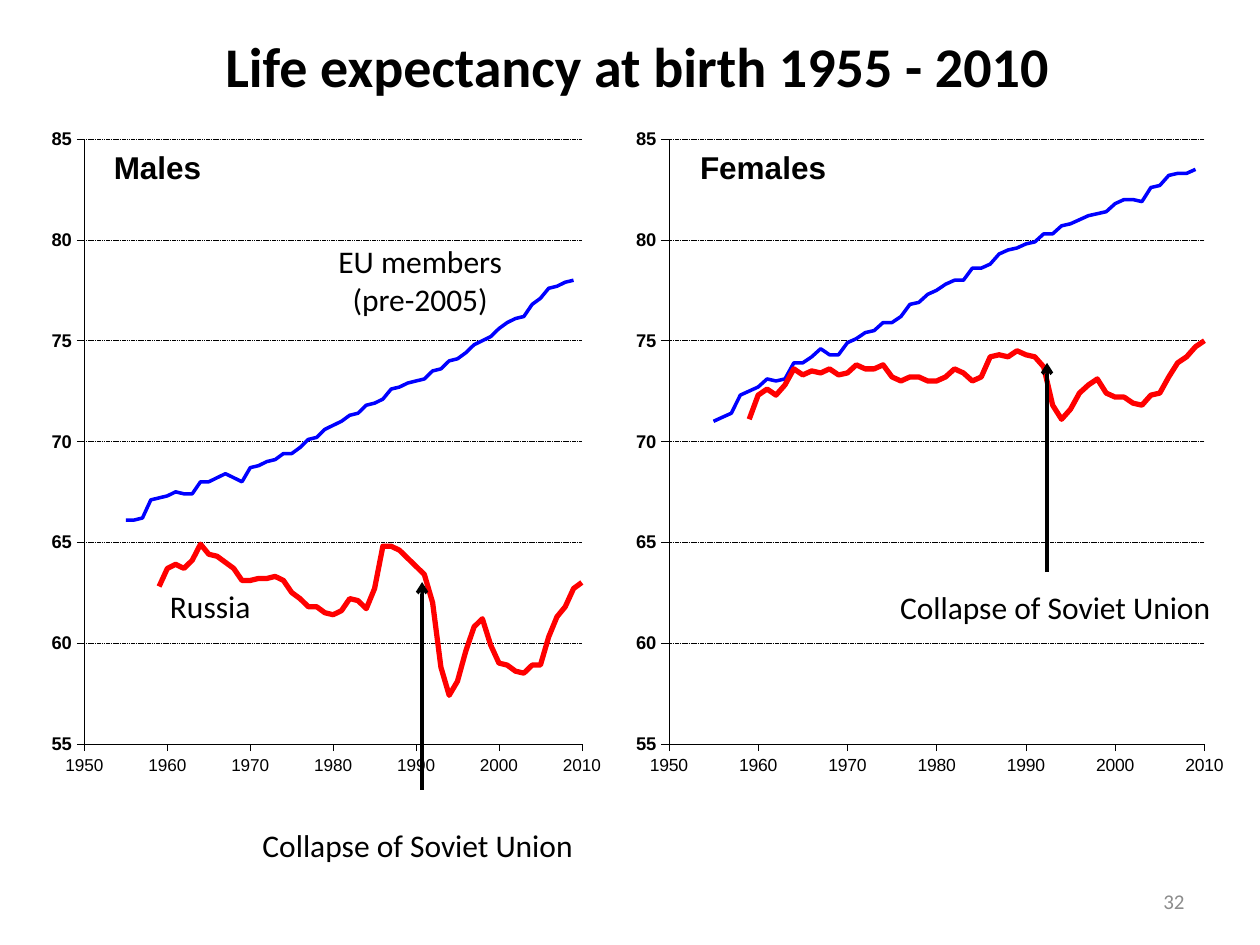
from dataclasses import dataclass

from lxml import etree
from pptx import Presentation
from pptx.chart.data import XyChartData
from pptx.dml.color import RGBColor
from pptx.enum.chart import XL_CHART_TYPE, XL_TICK_MARK
from pptx.enum.dml import MSO_LINE
from pptx.enum.shapes import MSO_CONNECTOR
from pptx.enum.text import MSO_ANCHOR, MSO_AUTO_SIZE, PP_ALIGN
from pptx.oxml import parse_xml
from pptx.oxml.ns import nsdecls, qn
from pptx.util import Inches, Pt

SCATTER = XL_CHART_TYPE.XY_SCATTER_LINES_NO_MARKERS
OUTSIDE, NO_TICK = XL_TICK_MARK.OUTSIDE, XL_TICK_MARK.NONE
DASH = MSO_LINE.SQUARE_DOT
STRAIGHT = MSO_CONNECTOR.STRAIGHT
MIDDLE = MSO_ANCHOR.MIDDLE
FIT, FIXED = MSO_AUTO_SIZE.SHAPE_TO_FIT_TEXT, MSO_AUTO_SIZE.NONE
LEFT, CENTER, RIGHT = PP_ALIGN.LEFT, PP_ALIGN.CENTER, PP_ALIGN.RIGHT


@dataclass(frozen=True)
class Theme:
    """Colours, fonts and type sizes of the slide."""
    black: RGBColor = RGBColor(0, 0, 0)
    white: RGBColor = RGBColor(255, 255, 255)
    grey: RGBColor = RGBColor(0x8C, 0x8C, 0x8C)
    russia: RGBColor = RGBColor(255, 0, 0)
    union: RGBColor = RGBColor(0, 0, 255)
    text_font: str = "Calibri"
    chart_font: str = "Arial"
    title: float = 32
    label: float = 18
    number: float = 12
    axis: float = 10.5


THEME = Theme()
YEARS = range(1955, 2011)
RUSSIA_START, UNION_START = 1959, 1955
PLOT_AREA = {"x": 0.079, "y": 0.027, "w": 0.864, "h": 0.788}
TITLE_AREA = {"x": 0.12, "y": 0.03}

MALES_RUSSIA = (
    62.8, 63.7, 63.9, 63.7, 64.1, 64.9, 64.4, 64.3, 64, 63.7, 63.1, 63.1, 63.2,
    63.2, 63.3, 63.1, 62.5, 62.2, 61.8, 61.8, 61.5, 61.4, 61.6, 62.2, 62.1, 61.7,
    62.7, 64.8, 64.8, 64.6, 64.2, 63.8, 63.4, 62, 58.8, 57.4, 58.1, 59.6, 60.8,
    61.2, 59.9, 59, 58.9, 58.6, 58.5, 58.9, 58.9, 60.3, 61.3, 61.8, 62.7, 63)
MALES_UNION = (
    66.1, 66.1, 66.2, 67.1, 67.2, 67.3, 67.5, 67.4, 67.4, 68, 68, 68.2, 68.4,
    68.2, 68, 68.7, 68.8, 69, 69.1, 69.4, 69.4, 69.7, 70.1, 70.2, 70.6, 70.8, 71,
    71.3, 71.4, 71.8, 71.9, 72.1, 72.6, 72.7, 72.9, 73, 73.1, 73.5, 73.6, 74,
    74.1, 74.4, 74.8, 75, 75.2, 75.6, 75.9, 76.1, 76.2, 76.8, 77.1, 77.6, 77.7,
    77.9, 78)
FEMALES_RUSSIA = (
    71.1, 72.3, 72.6, 72.3, 72.8, 73.6, 73.3, 73.5, 73.4, 73.6, 73.3, 73.4, 73.8,
    73.6, 73.6, 73.8, 73.2, 73, 73.2, 73.2, 73, 73, 73.2, 73.6, 73.4, 73, 73.2,
    74.2, 74.3, 74.2, 74.5, 74.3, 74.2, 73.7, 71.8, 71.1, 71.6, 72.4, 72.8, 73.1,
    72.4, 72.2, 72.2, 71.9, 71.8, 72.3, 72.4, 73.2, 73.9, 74.2, 74.7, 75)
FEMALES_UNION = (
    71, 71.2, 71.4, 72.3, 72.5, 72.7, 73.1, 73, 73.1, 73.9, 73.9, 74.2, 74.6,
    74.3, 74.3, 74.9, 75.1, 75.4, 75.5, 75.9, 75.9, 76.2, 76.8, 76.9, 77.3, 77.5,
    77.8, 78, 78, 78.6, 78.6, 78.8, 79.3, 79.5, 79.6, 79.8, 79.9, 80.3, 80.3,
    80.7, 80.8, 81, 81.2, 81.3, 81.4, 81.8, 82, 82, 81.9, 82.6, 82.7, 83.2, 83.3,
    83.3, 83.5)


def apply(target, **values):
    """Set each named attribute on the target."""
    for name, value in values.items():
        setattr(target, name, value)


def style_font(font, size, color=THEME.black, name=THEME.text_font, bold=False):
    """Give a font its face, size, weight and colour."""
    apply(font, size=Pt(size), name=name, bold=bold)
    font.color.rgb = color


def style_line(line, color, width):
    """Give a line its colour and width."""
    line.color.rgb = color
    line.width = Pt(width)


def place_manually(parent, index, area, inner=False):
    """Give a chart part a manual layout in fractions of the chart."""
    for old in parent.findall(qn("c:layout")):
        parent.remove(old)
    layout = etree.Element(qn("c:layout"))
    manual = etree.SubElement(layout, qn("c:manualLayout"))
    values = {"layoutTarget": "inner"} if inner else {}
    values |= {"xMode": "edge", "yMode": "edge"}
    values |= {key: str(value) for key, value in area.items()}
    for key, value in values.items():
        etree.SubElement(manual, qn(f"c:{key}")).set("val", value)
    parent.insert(index, layout)


def style_axis(axis, size, low, high, step, bold):
    """Scale an axis and format its line and labels."""
    apply(axis, minimum_scale=low, maximum_scale=high, major_unit=step,
          major_tick_mark=OUTSIDE, minor_tick_mark=NO_TICK)
    style_line(axis.format.line, THEME.black, 0.25)
    style_font(axis.tick_labels.font, size, name=THEME.chart_font, bold=bold)


def yearly_data(russia, union):
    """Put both series on the same years, with None where there is no value."""
    data = XyChartData()
    for name, start, values in (("Series 1", RUSSIA_START, russia),
                                ("Series 2", UNION_START, union)):
        series = data.add_series(name)
        by_year = dict(enumerate(values, start))
        for year in YEARS:
            series.add_data_point(year, by_year.get(year))
    return data


def clear_missing_points(plot):
    """Leave years without a value empty in the chart."""
    for point in list(plot._element.iter(qn("c:pt"))):
        if point.findtext(qn("c:v")) in (None, "", "None"):
            point.getparent().remove(point)


def add_panel(slide, heading, left, width, year_size, russia, union):
    """Add one life expectancy chart."""
    chart = slide.shapes.add_chart(SCATTER, Inches(left), Inches(0.94), Inches(width),
                                   Inches(6.09), yearly_data(russia, union)).chart
    chart.has_legend = False
    style_font(chart.font, THEME.axis, name=THEME.chart_font)
    plot = chart.plots[0]
    plot.vary_by_categories = False
    clear_missing_points(plot)
    for series, color, weight in zip(plot.series, (THEME.russia, THEME.union), (3, 2)):
        series.smooth = False
        style_line(series.format.line, color, weight)

    style_axis(chart.category_axis, year_size, 1950, 2010, 10, False)
    style_axis(chart.value_axis, THEME.axis, 55, 85, 5, True)
    chart.category_axis.has_major_gridlines = False
    chart.value_axis.has_major_gridlines = True
    grid = chart.value_axis.major_gridlines.format.line
    style_line(grid, THEME.black, 0.25)
    grid.dash_style = DASH

    title = chart.chart_title
    title.text_frame.text = heading
    style_font(title.text_frame.paragraphs[0].runs[0].font, THEME.label,
               name=THEME.chart_font, bold=True)
    title_node = title._element
    place_manually(title_node, 1, TITLE_AREA)
    title_node.find(qn("c:overlay")).set("val", "1")
    chart_node = chart._chartSpace.find(qn("c:chart"))
    place_manually(chart_node.find(qn("c:plotArea")), 0, PLOT_AREA, inner=True)
    chart_node.addnext(parse_xml(
        f'<c:spPr {nsdecls("c", "a")}><a:solidFill><a:srgbClr val="{THEME.white}">'
        '<a:alpha val="84000"/></a:srgbClr></a:solidFill>'
        '<a:ln><a:noFill/></a:ln></c:spPr>'))


def write(box, lines, size, color=THEME.black, align=LEFT, bold=False, **frame_values):
    """Write lines of text into a box as paragraphs."""
    frame = box.text_frame
    apply(frame, **frame_values)
    for index, line in enumerate(lines):
        para = frame.add_paragraph() if index else frame.paragraphs[0]
        para.alignment = align
        span = para.add_run()
        span.text = line
        style_font(span.font, size, color, bold=bold)


def add_title(slide, text):
    """Move, fill and write the title placeholder."""
    title = slide.shapes.title
    apply(title, left=Inches(1.66), top=Inches(0.2), width=Inches(6.8), height=Inches(0.64))
    title.fill.solid()
    title.fill.fore_color.rgb = THEME.white
    color = title._element.spPr.find(".//" + qn("a:srgbClr"))
    etree.SubElement(color, qn("a:alpha")).set("val", "80000")
    write(title, [text], THEME.title, align=CENTER, bold=True, word_wrap=False, auto_size=FIT)


def add_label(slide, area, lines, align=CENTER):
    """Add a text label that fits its words."""
    box = slide.shapes.add_textbox(*map(Inches, area))
    write(box, lines, THEME.label, align=align, word_wrap=False, auto_size=FIT)


def add_page_number(slide, number):
    """Add the page number at the lower right."""
    box = slide.shapes.add_textbox(*map(Inches, (7.17, 6.95, 2.33, 0.4)))
    write(box, [number], THEME.number, THEME.grey, RIGHT,
          word_wrap=True, auto_size=FIXED, vertical_anchor=MIDDLE)


def add_arrow(slide, x, bottom, top):
    """Add an upward arrow."""
    arrow = slide.shapes.add_connector(STRAIGHT, *map(Inches, (x, bottom, x, top)))
    style_line(arrow.line, THEME.black, 2)
    etree.SubElement(arrow.line._get_or_add_ln(), qn("a:tailEnd")).set("type", "arrow")
    etree.SubElement(arrow._element.spPr, qn("a:effectLst"))


def main():
    """Build and save the slide."""
    deck = Presentation()
    apply(deck, slide_width=Inches(10), slide_height=Inches(7.5))
    slide = deck.slides.add_slide(deck.slide_layouts[5])
    add_panel(slide, "Females", 4.92, 4.92, 10, FEMALES_RUSSIA, FEMALES_UNION)
    add_panel(slide, "Males", 0.31, 4.57, 9.8, MALES_RUSSIA, MALES_UNION)
    add_title(slide, "Life expectancy at birth 1955 - 2010")
    add_label(slide, (1.25, 4.61, 0.85, 0.4), ["Russia"], LEFT)
    add_label(slide, (2.58, 1.87, 1.51, 0.71), ["EU members", "(pre-2005)"])
    add_page_number(slide, "32")
    for x, bottom, top, left, label_top in ((3.35, 6.27, 4.62, 1.97, 6.51),
                                            (8.31, 4.54, 2.88, 7.03, 4.62)):
        add_arrow(slide, x, bottom, top)
        add_label(slide, (left, label_top, 2.69, 0.4), ["Collapse of Soviet Union"])
    deck.save("out.pptx")


if __name__ == "__main__":
    main()
